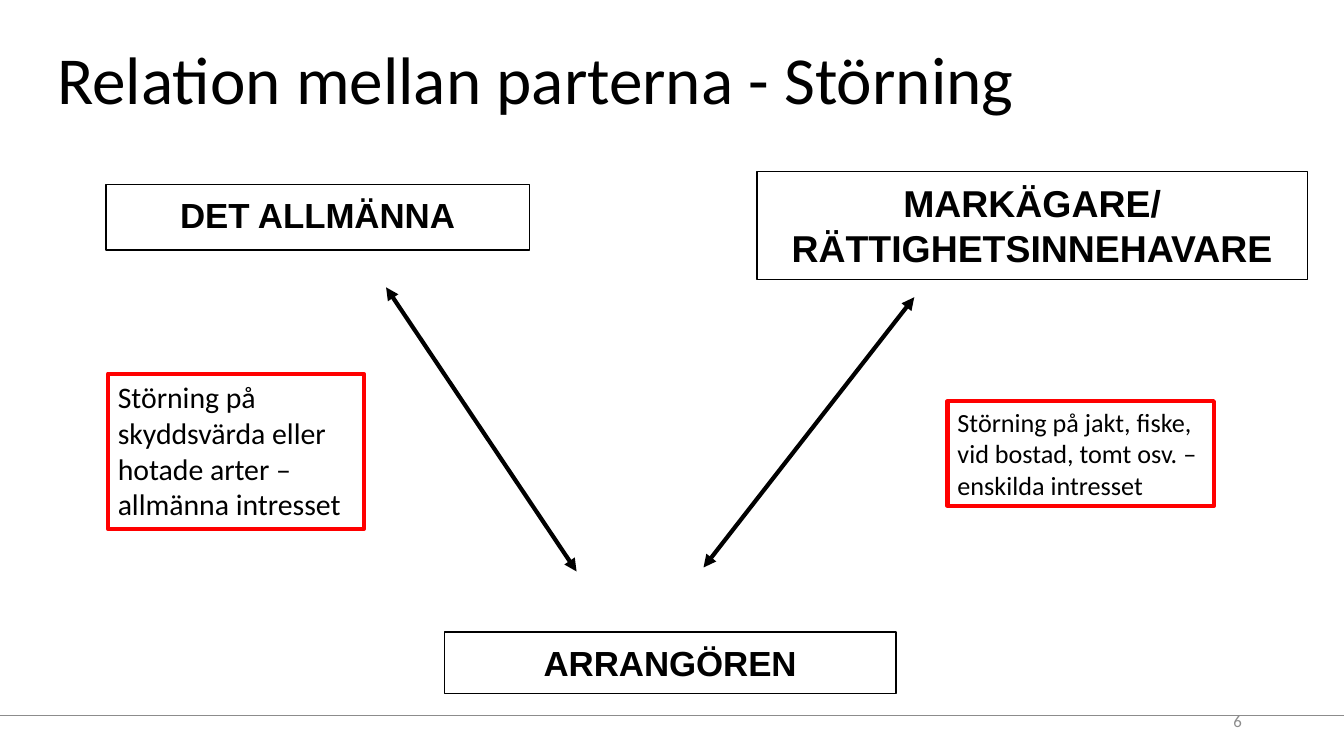
"""Build a slide on the relations between the parties to a disturbance."""
from lxml import etree
from pptx import Presentation
from pptx.dml.color import RGBColor
from pptx.enum.shapes import MSO_CONNECTOR, MSO_SHAPE
from pptx.enum.text import MSO_ANCHOR, MSO_AUTO_SIZE, PP_ALIGN
from pptx.oxml.ns import qn
from pptx.util import Cm, Pt

STRAIGHT = MSO_CONNECTOR.STRAIGHT
RECT = MSO_SHAPE.RECTANGLE
TOP, MIDDLE = MSO_ANCHOR.TOP, MSO_ANCHOR.MIDDLE
LEFT, CENTER, RIGHT = PP_ALIGN.LEFT, PP_ALIGN.CENTER, PP_ALIGN.RIGHT
NO_FIT, GROW = MSO_AUTO_SIZE.NONE, MSO_AUTO_SIZE.SHAPE_TO_FIT_TEXT

BLACK, WHITE, RED, GREY = "000000", "FFFFFF", "FF0000", "8C8C8C"
TITLE_BOX = (1.19, 0.99, 31.72, 2.72)
PAGE_BOX = (23.93, 17.65, 7.62, 1.02)
FOOTER_Y = 18.03
PARTIES = [
    ((2.67, 4.65, 10.67, 1.65), ["DET ALLMÄNNA"], 24.9),
    ((19.08, 4.32, 13.87, 2.72), ["MARKÄGARE/", "RÄTTIGHETSINNEHAVARE"], 26.7),
    ((11.2, 15.93, 11.38, 1.55), ["ARRANGÖREN"], 24.9),
]
INTERESTS = [
    ((2.72, 9.42, 6.45, 3.91),
     "Störning på skyddsvärda eller hotade arter – allmänna intresset", 21.3),
    ((23.88, 10.11, 6.71, 2.64),
     "Störning på jakt, fiske, vid bostad, tomt osv. – enskilda intresset", 18.7),
]
ARROWS = [((14.53, 14.4), (9.73, 7.24)), ((17.73, 14.3), (23.04, 7.49))]


def color(value):
    """Return the colour for a hex string."""
    return RGBColor.from_string(value)


def write(tf, lines, size, font="Calibri", ink=BLACK, align=LEFT, bold=False):
    """Fill a text frame with one paragraph for each line."""
    tf.word_wrap = True
    for i, line in enumerate(lines):
        p = tf.add_paragraph() if i else tf.paragraphs[0]
        p.text = line
        p.alignment = align
        p.font.size = Pt(size)
        p.font.name = font
        p.font.bold = bold
        p.font.color.rgb = color(ink)


def add_title(s, box, text):
    """Place the title placeholder in its box and fill it."""
    sp = s.shapes.title
    sp.left, sp.top, sp.width, sp.height = map(Cm, box)
    tf = sp.text_frame
    tf.vertical_anchor = TOP
    tf.auto_size = NO_FIT
    write(tf, [text], 48)
    tf.paragraphs[0].line_spacing = Pt(52.8)


def add_frame(s, box, edge, weight):
    """Add an outlined rectangle with top-anchored text and return it."""
    sp = s.shapes.add_shape(RECT, *map(Cm, box))
    sp.shadow.inherit = False
    sp.line.color.rgb = color(edge)
    sp.line.width = Pt(weight)
    sp.text_frame.vertical_anchor = TOP
    return sp


def add_party(s, box, lines, size):
    """Add a white box that names one party."""
    sp = add_frame(s, box, BLACK, 1)
    sp.fill.solid()
    sp.fill.fore_color.rgb = color(WHITE)
    tf = sp.text_frame
    tf.margin_left = tf.margin_right = Cm(0.46)
    tf.margin_top = tf.margin_bottom = Cm(0.23)
    write(tf, lines, size, "Arial", align=CENTER, bold=True)


def add_interest(s, box, text, size):
    """Add a red frame that describes one disturbed interest."""
    sp = add_frame(s, box, RED, 3)
    sp.fill.background()
    write(sp.text_frame, [text], size)
    sp.text_frame.auto_size = GROW


def add_line(s, start, end, ink, weight, arrows=False):
    """Add a straight line, with arrowheads at both ends if asked."""
    cxn = s.shapes.add_connector(STRAIGHT, *map(Cm, start + end))
    cxn.line.color.rgb = color(ink)
    cxn.line.width = Pt(weight)
    if arrows:
        ln = cxn.line._get_or_add_ln()
        for tag in ("a:headEnd", "a:tailEnd"):
            etree.SubElement(ln, qn(tag), type="triangle")
    etree.SubElement(cxn._element.spPr, qn("a:effectLst"))


def add_footer(s, y, box, number):
    """Add the footer rule and the page number."""
    add_line(s, (0, y), (33.87, y), GREY, 0.4)
    tf = s.shapes.add_textbox(*map(Cm, box)).text_frame
    tf.vertical_anchor = MIDDLE
    write(tf, [number], 12, ink=GREY, align=RIGHT)


def main():
    """Build and save the presentation."""
    prs = Presentation()
    prs.slide_width, prs.slide_height = Cm(33.87), Cm(19.05)
    s = prs.slides.add_slide(prs.slide_layouts[5])
    add_footer(s, FOOTER_Y, PAGE_BOX, "6")
    add_title(s, TITLE_BOX, "Relation mellan parterna - Störning")
    for party in PARTIES:
        add_party(s, *party)
    for interest in INTERESTS:
        add_interest(s, *interest)
    for start, end in ARROWS:
        add_line(s, start, end, BLACK, 3, arrows=True)
    prs.save("out.pptx")


if __name__ == "__main__":
    main()
